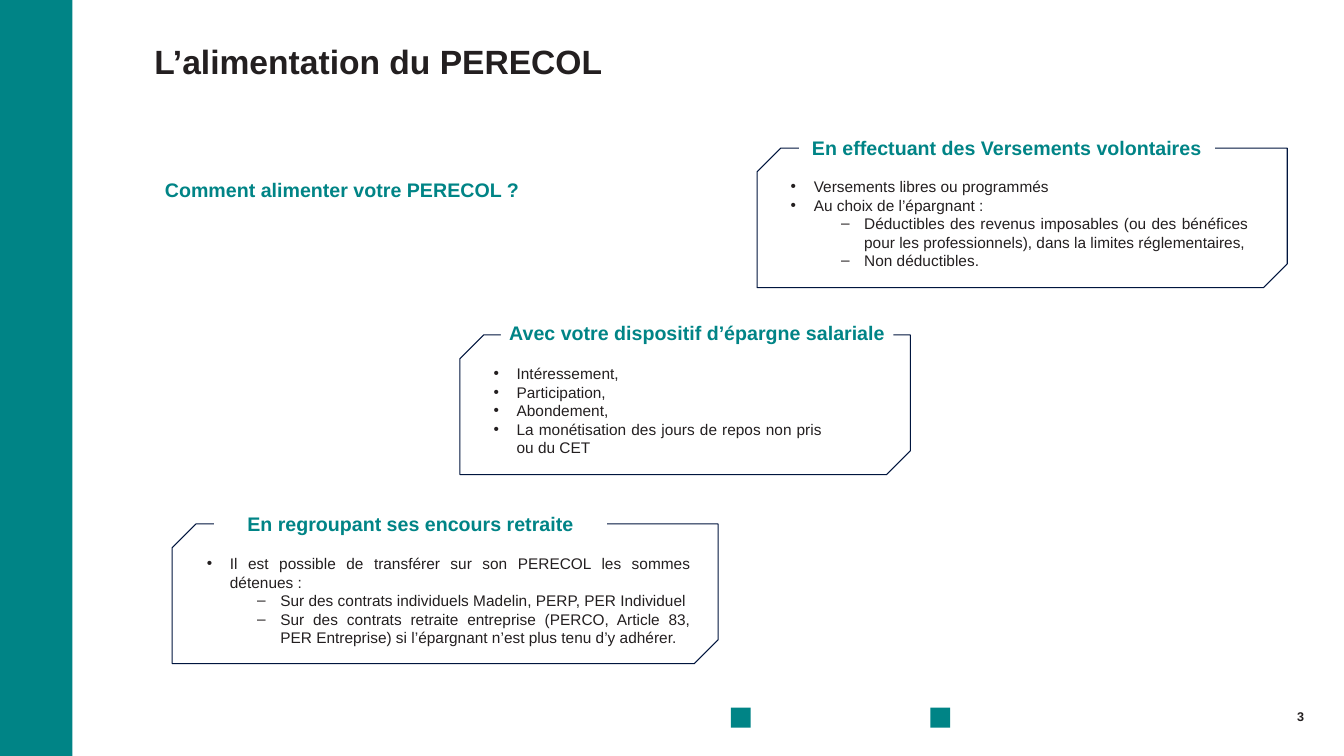
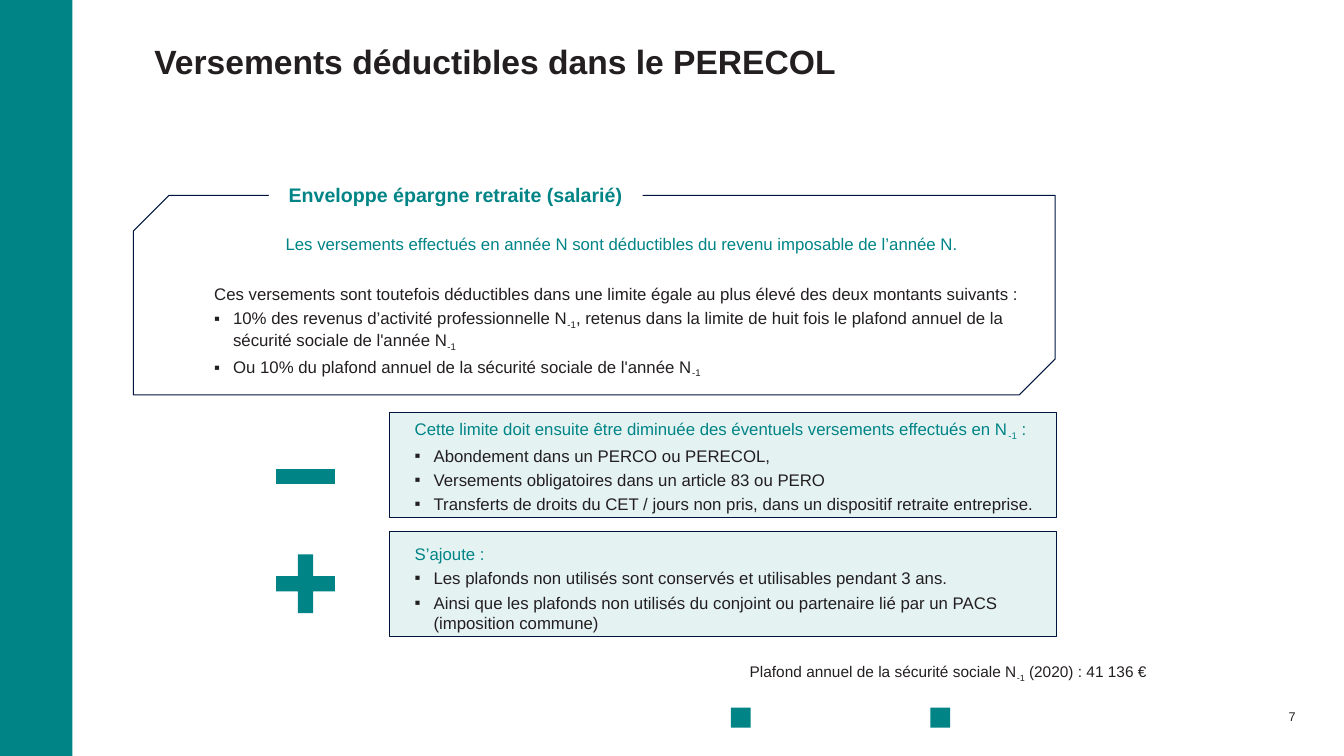
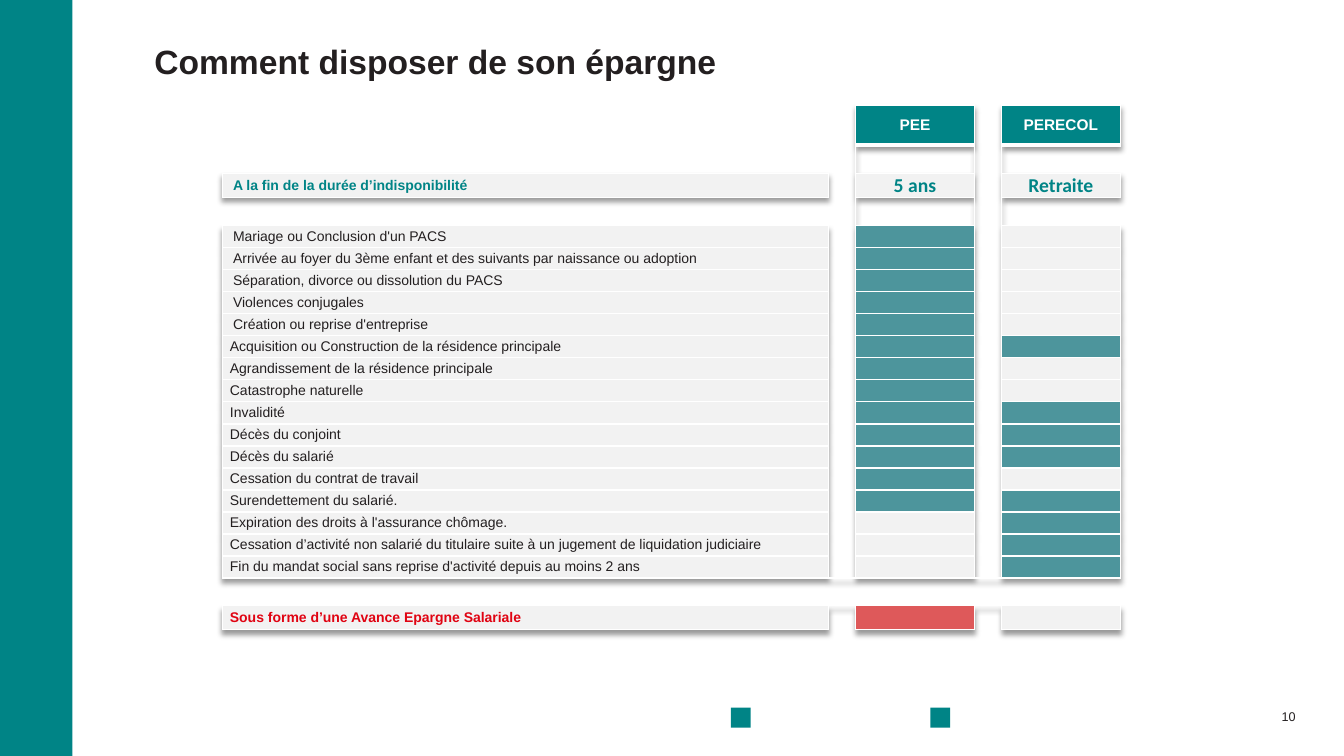
"""Build three slides about the PERECOL savings plan."""
from dataclasses import dataclass
from typing import Any, Optional, Sequence

from lxml import etree
from pptx import Presentation
from pptx import util as u
from pptx.dml.color import RGBColor
from pptx.enum import shapes, text
from pptx.oxml.ns import qn

SCALE = 9525
TEAL, INK, NAVY, WHITE = "008486", "231F20", "00153E", "FFFFFF"
GREY, OPEN, RED, ROSE = "F2F2F2", "4D959C", "E00312", "DE595A"
FONT = "Arial"
CENTER, JUSTIFY, RIGHT = text.PP_ALIGN.CENTER, text.PP_ALIGN.JUSTIFY, text.PP_ALIGN.RIGHT
MIDDLE, TOP = text.MSO_ANCHOR.MIDDLE, text.MSO_ANCHOR.TOP
SHAPE = shapes.MSO_SHAPE


@dataclass(frozen=True)
class Box:
    """A rectangle in px."""
    x: int
    y: int
    w: int
    h: int


@dataclass(frozen=True)
class Par:
    """A paragraph; parts between bars are subscript."""
    text: str
    bullet: str = ""
    indent: int = 0
    level: int = 0
    color: str = INK
    align: Optional[text.PP_ALIGN] = None
    after: int = 0


@dataclass(frozen=True)
class Panel:
    """A snipped frame with a heading over its edge and a list inside."""
    frame: Box
    heading_box: Box
    heading: str
    body_box: Box
    body: Sequence[Par]
    size: int = 11
    snip: float = 0.17
    side: int = 4


def px(n: int) -> int:
    """Turn px into EMU."""
    return u.Emu(n * SCALE)


def rgb(color: str) -> RGBColor:
    """Turn a hex string into a colour."""
    return RGBColor.from_string(color)


def place(box: Box) -> tuple[int, int, int, int]:
    """Give the EMU position and size of a box."""
    return px(box.x), px(box.y), px(box.w), px(box.h)


def write(p: Any, content: str, *, size: int, color: str = INK, bold: bool = False,
          font: str = FONT, align: Optional[text.PP_ALIGN] = None, after: int = 0,
          spacing: Optional[float] = None, bullet: str = "", indent: int = 0,
          level: int = 0) -> None:
    """Write formatted text into a paragraph."""
    p.alignment, p.level = align or text.PP_ALIGN.LEFT, level
    p.space_before, p.space_after = u.Pt(0), u.Pt(after)
    if spacing:
        p.line_spacing = spacing
    if bullet:
        pPr = p._p.get_or_add_pPr()
        hang = 18 if bullet == "▪" else 22
        pPr.set("marL", str(px(indent)))
        pPr.set("indent", str(px(-hang)))
        etree.SubElement(pPr, qn("a:buFont")).set("typeface", FONT)
        etree.SubElement(pPr, qn("a:buChar")).set("char", bullet)
    for i, part in enumerate(content.split("|")):
        if not part:
            continue
        r = p.add_run()
        r.text = part
        r.font.name, r.font.size, r.font.bold = font, u.Pt(size), bold
        r.font.color.rgb = rgb(color)
        if i % 2:
            r._r.get_or_add_rPr().set("baseline", "-20000")


def set_frame(tf: Any, side: int = 10, edge: int = 5, right: Optional[int] = None,
              anchor: text.MSO_ANCHOR = TOP) -> None:
    """Set the wrapping, insets and anchor of a text frame."""
    tf.word_wrap, tf.auto_size = True, text.MSO_AUTO_SIZE.NONE
    tf.margin_left, tf.margin_right = px(side), px(side if right is None else right)
    tf.margin_top = tf.margin_bottom = px(edge)
    tf.vertical_anchor = anchor


def add_text(s: Any, box: Box, pars: Sequence[Par], size: int, bold: bool = False) -> None:
    """Add a text box with its paragraphs."""
    tf = s.shapes.add_textbox(*place(box)).text_frame
    set_frame(tf)
    for i, par in enumerate(pars):
        p = tf.add_paragraph() if i else tf.paragraphs[0]
        write(p, par.text, size=size, bold=bold, color=par.color, align=par.align,
              after=par.after, bullet=par.bullet, indent=par.indent, level=par.level)


def add_shape(s: Any, kind: Any, box: Box, fill: str, line: str = "",
              alpha: int = 100, adj: Sequence[float] = ()) -> Any:
    """Add a flat preset shape."""
    sp = s.shapes.add_shape(kind, *place(box))
    sp.shadow.inherit = False
    sp.fill.solid()
    sp.fill.fore_color.rgb = rgb(fill)
    if alpha < 100:
        clr = sp._element.spPr.find(qn("a:solidFill"))[0]
        etree.SubElement(clr, qn("a:alpha")).set("val", str(alpha * 1000))
    if line:
        sp.line.color.rgb, sp.line.width = rgb(line), u.Pt(0.75)
    else:
        sp.line.fill.background()
    for i, value in enumerate(adj):
        sp.adjustments[i] = value
    return sp


def add_panel(s: Any, panel: Panel) -> None:
    """Draw a panel."""
    add_shape(s, SHAPE.SNIP_2_DIAG_RECTANGLE, panel.frame, WHITE, NAVY,
              adj=(panel.snip, 0))
    add_text(s, panel.body_box, panel.body, panel.size)
    tf = add_shape(s, SHAPE.RECTANGLE, panel.heading_box, WHITE).text_frame
    set_frame(tf, panel.side)
    write(tf.paragraphs[0], panel.heading, size=14, color=TEAL, bold=True, align=CENTER)


def add_bands(prs: Any, s: Any) -> None:
    """Draw the band and footer squares and move them to the layout."""
    for box in (Box(0, 0, 69, 720), Box(696, 674, 19, 19), Box(886, 674, 19, 19)):
        sp = add_shape(s, SHAPE.RECTANGLE, box, TEAL)
        prs.slide_layouts[5].shapes._spTree.append(sp._element)


def add_slide(prs: Any, title: str, number: int, bold: bool = False, right: int = 8) -> Any:
    """Add a slide with its title and number."""
    s = prs.slides.add_slide(prs.slide_layouts[5])
    sp = s.shapes.title
    sp.left, sp.top, sp.width, sp.height = place(Box(147, 39, 1093, 65))
    set_frame(sp.text_frame, 0, right=10)
    write(sp.text_frame.paragraphs[0], title, size=24, bold=True, spacing=0.87)
    tf = s.shapes.add_textbox(*place(Box(1188, 673, 54, 20))).text_frame
    set_frame(tf, 0, 0, right=right, anchor=MIDDLE)
    write(tf.paragraphs[0], str(number), size=9, bold=bold, align=RIGHT, spacing=0.87)
    return s


def dot(content: str) -> Par:
    """Make a first-level item."""
    return Par(content, "•", 22, align=JUSTIFY)


def dash(content: str) -> Par:
    """Make a second-level item."""
    return Par(content, "–", 70, 1, align=JUSTIFY)


def square(content: str, after: int = 3) -> Par:
    """Make a square-bullet item."""
    return Par(content, "▪", 18, after=after)


FUNDING = (
    Panel(Box(721, 141, 505, 133), Box(761, 124, 396, 32),
          "En effectuant des Versements volontaires", Box(743, 164, 456, 99), (
              dot("Versements libres ou programmés"),
              dot("Au choix de l’épargnant :"),
              dash("Déductibles des revenus imposables (ou des bénéfices pour les "
                   "professionnels), dans la limites réglementaires,"),
              dash("Non déductibles."))),
    Panel(Box(438, 319, 429, 133), Box(477, 301, 374, 32),
          "Avec votre dispositif d’épargne salariale", Box(460, 342, 333, 99), (
              dot("Intéressement,"),
              dot("Participation,"),
              dot("Abondement,"),
              dot("La monétisation des jours de repos non pris ou du CET"))),
    Panel(Box(164, 499, 520, 133), Box(204, 483, 374, 32),
          "En regroupant ses encours retraite", Box(187, 523, 481, 99), (
              dot("Il est possible de transférer sur son PERECOL les sommes détenues :"),
              dash("Sur des contrats individuels Madelin, PERP, PER Individuel"),
              dash("Sur des contrats retraite entreprise (PERCO, Article 83, PER "
                   "Entreprise) si l’épargnant n’est plus tenu d’y adhérer."))),
)

ENVELOPE = Panel(
    Box(127, 186, 878, 190), Box(256, 169, 356, 32),
    "Enveloppe épargne retraite (salarié)", Box(194, 218, 797, 142), (
        Par("Les versements effectués en année N sont déductibles du revenu imposable "
            "de l’année N.", color=TEAL, align=CENTER, after=21),
        Par("Ces versements sont toutefois déductibles dans une limite égale au plus "
            "élevé des deux montants suivants :", after=3),
        square("10% des revenus d’activité professionnelle N|-1|, retenus dans la limite "
               "de huit fois le plafond annuel de la sécurité sociale de l'année N|-1"),
        square("Ou 10% du plafond annuel de la sécurité sociale de l'année N|-1")),
    size=12, snip=0.18, side=10)

ADJUSTMENTS = (
    Par("Cette limite doit ensuite être diminuée des éventuels versements effectués "
        "en N|-1| :", color=TEAL, after=3),
    square("Abondement dans un PERCO ou PERECOL,"),
    square("Versements obligatoires dans un article 83 ou PERO"),
    square("Transferts de droits du CET / jours non pris, dans un dispositif retraite "
           "entreprise.", after=21),
    Par("S’ajoute :", color=TEAL, after=3),
    square("Les plafonds non utilisés sont conservés et utilisables pendant 3 ans."),
    square("Ainsi que les plafonds non utilisés du conjoint ou partenaire lié par un PACS "
           "(imposition commune)"),
)

CASES = (
    ("Mariage ou Conclusion d'un PACS", True, False),
    ("Arrivée au foyer du 3ème enfant et des suivants par naissance ou adoption", True, False),
    ("Séparation, divorce ou dissolution du PACS", True, False),
    ("Violences conjugales", True, False),
    ("Création ou reprise d'entreprise", True, False),
    ("Acquisition ou Construction de la résidence principale", True, True),
    ("Agrandissement de la résidence principale", True, False),
    ("Catastrophe naturelle", True, False),
    ("Invalidité", True, True),
    ("Décès du conjoint", True, True),
    ("Décès du salarié", True, True),
    ("Cessation du contrat de travail", True, False),
    ("Surendettement du salarié.", True, True),
    ("Expiration des droits à l'assurance chômage.", False, True),
    ("Cessation d’activité non salarié du titulaire suite à un jugement de liquidation "
     "judiciaire", False, True),
    ("Fin du mandat social sans reprise d'activité depuis au moins 2 ans", False, True),
)
COLUMNS = (577, 26, 113, 26, 113)
ROWS = (38, 27, 23, 27) + (21,) * len(CASES) + (26, 23)


def fill_cell(cell: Any, fill: str, content: str = "", *, side: int = 10,
              bottom: int = 1, **style: Any) -> None:
    """Fill a cell, edge it in white and write its text."""
    cell.fill.solid()
    cell.fill.fore_color.rgb = rgb(fill)
    tcPr = cell._tc.get_or_add_tcPr()
    for i, (edge, width) in enumerate(zip("LRTB", (1, 1, 1, bottom))):
        ln = etree.Element(qn(f"a:ln{edge}"), w=str(u.Pt(width)))
        solid = etree.SubElement(ln, qn("a:solidFill"))
        etree.SubElement(solid, qn("a:srgbClr")).set("val", WHITE)
        tcPr.insert(i, ln)
    cell.margin_left = cell.margin_right = px(side)
    if content:
        write(cell.text_frame.paragraphs[0], content, **style)


def add_grid(s: Any) -> Any:
    """Add an unstyled table with a soft shadow and small empty cells."""
    box = Box(212, 100, sum(COLUMNS), sum(ROWS))
    table = s.shapes.add_table(len(ROWS), len(COLUMNS), *place(box)).table
    table.first_row = table.horz_banding = False
    tblPr = table._tbl.tblPr
    tblPr.find(qn("a:tableStyleId")).text = "{2D5ABB26-0587-4C30-8999-92F81FD0307C}"
    effects = etree.Element(qn("a:effectLst"))
    tblPr.insert(0, effects)
    shadow = etree.SubElement(effects, qn("a:outerShdw"), blurRad="50800", dist="38100",
                              dir="5400000", algn="t", rotWithShape="0")
    black = etree.SubElement(shadow, qn("a:prstClr"), val="black")
    etree.SubElement(black, qn("a:alpha")).set("val", "40000")
    for column, width in zip(table.columns, COLUMNS):
        column.width = px(width)
    for row, height in zip(table.rows, ROWS):
        row.height = px(height)
    for cell in table.iter_cells():
        cell.margin_top = cell.margin_bottom = 0
        cell.vertical_anchor = MIDDLE
        etree.SubElement(cell.text_frame.paragraphs[0]._p, qn("a:endParaRPr")).set("sz", "800")
    return table


def add_release_table(s: Any) -> None:
    """Draw the table of release cases."""
    table = add_grid(s)
    cell, last = table.cell, len(ROWS) - 1
    cell(0, 0).merge(cell(1, 0))
    for gap in (1, 3):
        cell(0, gap).merge(cell(last - 2, gap))
    cell(last - 1, 0).merge(cell(last - 1, 4))
    fill_cell(cell(2, 0), GREY, "A la fin de la durée d’indisponibilité",
              size=10, color=TEAL, bold=True)
    for col, plan, term in ((2, "PEE", "5 ans"), (4, "PERECOL", "Retraite")):
        fill_cell(cell(0, col), TEAL, plan, bottom=3, size=11, color=WHITE, bold=True,
                  align=CENTER)
        fill_cell(cell(2, col), GREY, term, size=14, color=TEAL, bold=True,
                  font="Calibri", align=CENTER)
    for i, (label, pee, perecol) in enumerate(CASES):
        fill_cell(cell(i + 4, 0), GREY, label, side=10 if i < 5 else 7, size=10)
        for col, allowed in ((2, pee), (4, perecol)):
            fill_cell(cell(i + 4, col), OPEN if allowed else GREY)
    fill_cell(cell(last, 0), GREY, "Sous forme d’une Avance Epargne Salariale", side=7,
              size=10, color=RED, bold=True)
    fill_cell(cell(last, 2), ROSE)
    fill_cell(cell(last, 4), GREY)


def main() -> None:
    """Build and save the slides."""
    prs = Presentation()
    prs.slide_width, prs.slide_height = px(1280), px(720)

    s = add_slide(prs, "L’alimentation du PERECOL", 3, bold=True, right=0)
    add_bands(prs, s)
    for panel in FUNDING:
        add_panel(s, panel)
    add_text(s, Box(147, 164, 374, 32),
             [Par("Comment alimenter votre PERECOL ?", color=TEAL)], 14, bold=True)

    s = add_slide(prs, "Versements déductibles dans le PERECOL", 7)
    for y in (393, 506):
        add_shape(s, SHAPE.RECTANGLE, Box(371, y, 635, 100), TEAL, NAVY, alpha=10)
    add_panel(s, ENVELOPE)
    add_text(s, Box(385, 394, 620, 212), ADJUSTMENTS, 12)
    for kind, y in ((SHAPE.MATH_MINUS, 416), (SHAPE.MATH_PLUS, 518)):
        add_shape(s, kind, Box(253, y, 76, 76), TEAL, adj=(0.19,))
    add_text(s, Box(704, 626, 405, 28),
             [Par("Plafond annuel de la sécurité sociale N|-1| (2020) : 41 136 €")], 11)

    s = add_slide(prs, "Comment disposer de son épargne", 10)
    add_release_table(s)
    prs.save("out.pptx")


if __name__ == "__main__":
    main()
